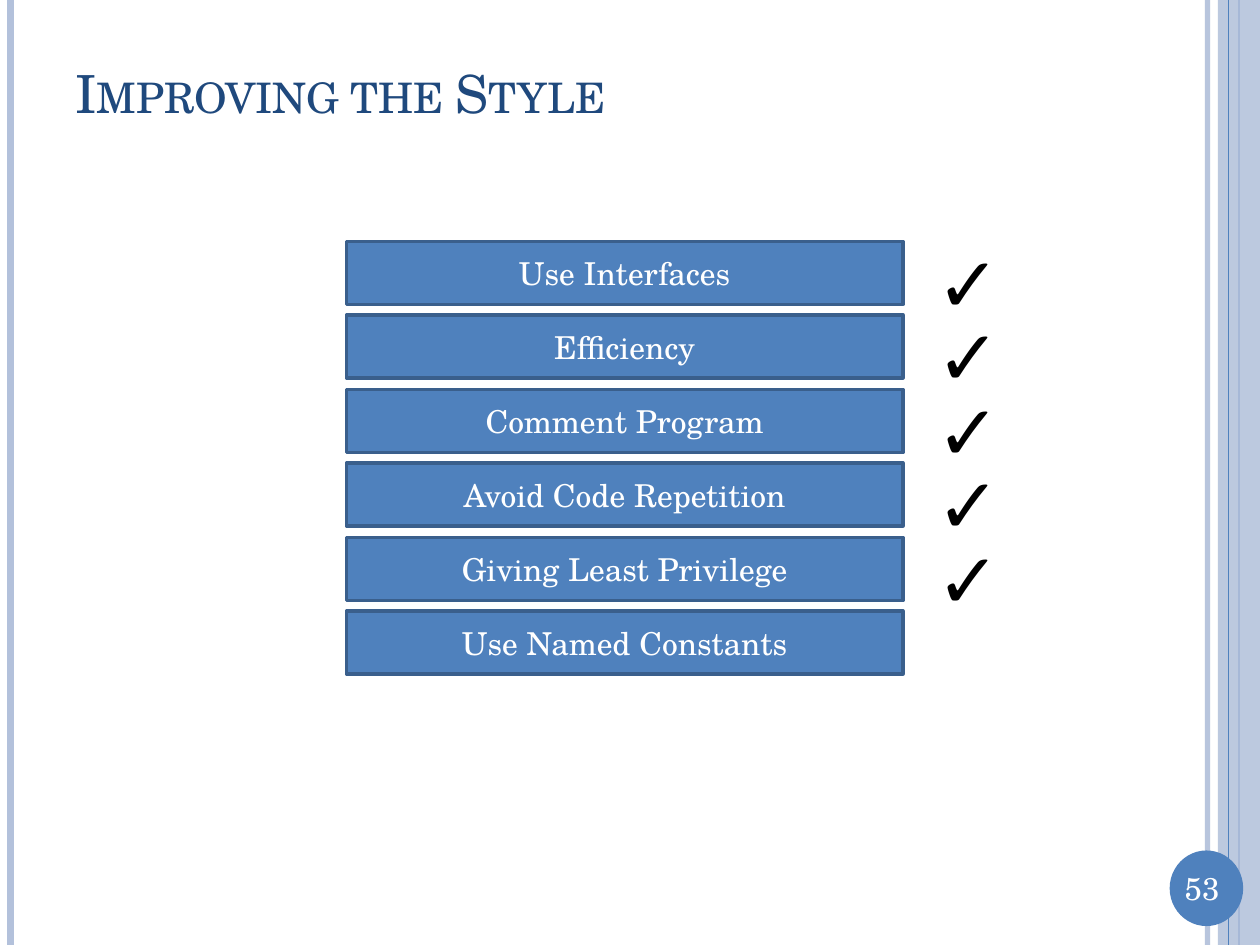
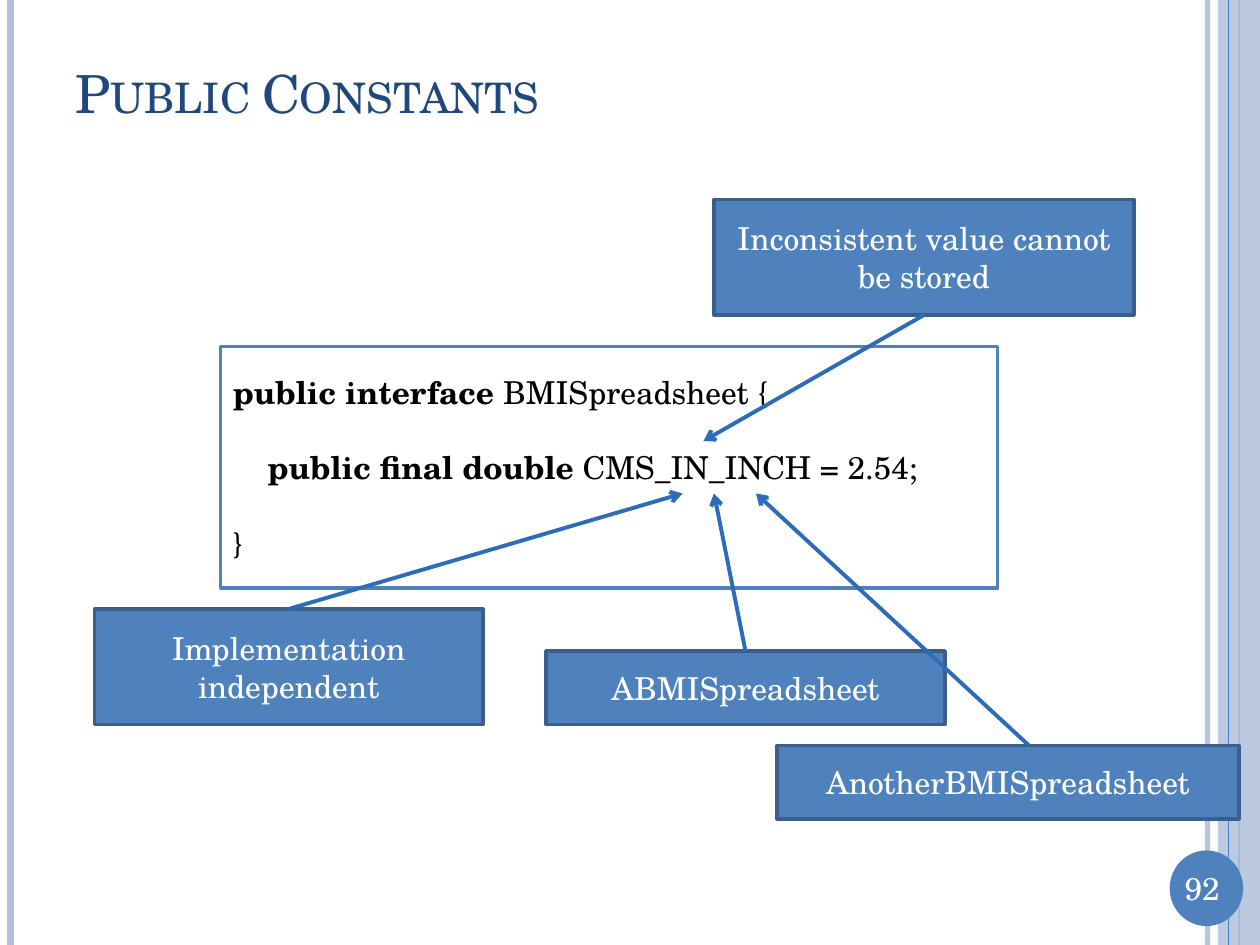
from pptx import Presentation
from pptx.dml.color import RGBColor
from pptx.enum.shapes import MSO_CONNECTOR, MSO_SHAPE
from pptx.enum.text import MSO_ANCHOR, PP_ALIGN
from pptx.oxml.ns import qn
from pptx.oxml.xmlchemy import OxmlElement
from pptx.util import Pt

PX = 7620  # EMU per px, 120 px to the inch
W, H = 1200, 900
COLORS = {
    "navy": "1F497D", "blue": "4F81BD", "edge": "3A5F8C", "arrow": "2C6CB9",
    "band": "B3C1DB", "white": "FFFFFF", "black": "000000",
}
RGB = {name: RGBColor.from_string(value) for name, value in COLORS.items()}
FONT = {"name": "TeX Gyre Schola", "size": Pt(18)}
LABEL = {"fill": "blue", "line": "edge"}


def add_box(sl, at, text="", kind=MSO_SHAPE.RECTANGLE, fill=None, line=None,
            color="white", align=PP_ALIGN.CENTER, anchor=MSO_ANCHOR.MIDDLE, **font):
    """Add a preset shape, or a text box when kind is None."""
    at = [v * PX for v in at]
    if kind is None:
        sp = sl.shapes.add_textbox(*at)
    else:
        sp = sl.shapes.add_shape(kind, *at)
        sp.shadow.inherit = False
        sp.fill.solid()
        sp.fill.fore_color.rgb = RGB[fill]
        if line:
            sp.line.color.rgb = RGB[line]
            sp.line.width = Pt(2)
        else:
            sp.line.fill.background()
    tf = sp.text_frame
    tf.word_wrap = True
    tf.vertical_anchor = anchor
    if text:
        p = tf.paragraphs[0]
        p.alignment = align
        r = p.add_run()
        r.text = text
        r.font.color.rgb = RGB[color]
        for key, value in {**FONT, **font}.items():
            setattr(r.font, key, value)
    return sp


def add_line(sl, start, end, color, width):
    cx = sl.shapes.add_connector(
        MSO_CONNECTOR.STRAIGHT, *[v * PX for v in (*start, *end)])
    cx.line.color.rgb = RGB[color]
    cx.line.width = Pt(width)
    cx._element.spPr.append(OxmlElement("a:effectLst"))
    return cx


prs = Presentation()
prs.slide_width, prs.slide_height = W * PX, H * PX

# Shared side bands, page number and title
slides = []
for title, number in [("Improving the Style", "53"), ("Public Constants", "92")]:
    sl = prs.slides.add_slide(prs.slide_layouts[6])
    slides.append(sl)
    rules = [add_line(sl, (x, 0), (x, H), color, width) for x, color, width in
             [(1150, "band", 3), (10, "band", 4.5), (1180, "blue", 1.5)]]
    band = add_box(sl, (1160, 0, 40, H), fill="band")
    add_line(sl, (1170, 0), (1170, H), "blue", 0.75)
    for sp, opacity in [(rules[0], 93), (band, 87)]:
        alpha = OxmlElement("a:alpha")
        alpha.set("val", str(opacity * 1000))
        next(sp._element.spPr.iter(qn("a:srgbClr"))).append(alpha)
    add_box(sl, (1114, 810, 70, 72), kind=MSO_SHAPE.OVAL, fill="blue")
    add_box(sl, (1110, 822, 70, 48), number, kind=None, anchor=MSO_ANCHOR.TOP)
    sp = add_box(sl, (60, 36, 1040, 104), title, kind=None, color="navy",
                 align=PP_ALIGN.LEFT, size=Pt(30))
    sp.text_frame.paragraphs[0].runs[0]._r.get_or_add_rPr().set("cap", "small")

style_slide, constants_slide = slides

# Checklist of style rules
style_rules = [
    ("Use Interfaces", True),
    ("Efficiency", True),
    ("Comment Program", True),
    ("Avoid Code Repetition", True),
    ("Giving Least Privilege", True),
    ("Use Named Constants", False),
]
for i, (rule, done) in enumerate(style_rules):
    top = 230 + round(i * 70.4)
    add_box(style_slide, (330, top, 530, 60), rule, **LABEL)
    if done:
        add_box(style_slide, (880, top - 12, 60, 101), "✓", kind=None, color="black",
                align=PP_ALIGN.LEFT, anchor=MSO_ANCHOR.TOP, size=Pt(44))

# Code listing: indent in px, then runs of (text, bold)
code = [
    (0, [("public interface ", True), ("BMISpreadsheet {", False)]),
    (33, [("public final double", True), (" CMS_IN_INCH = 2.54;", False)]),
    (0, [("}", False)]),
]
tf = add_box(constants_slide, (210, 330, 740, 230), fill="white", line="blue").text_frame
for i, (indent, runs) in enumerate(code):
    p = tf.add_paragraph() if i else tf.paragraphs[0]
    p.alignment = PP_ALIGN.LEFT
    p.space_before = Pt(21.4 if i else 0)
    p._p.get_or_add_pPr().set("marL", str(indent * PX))
    for text, bold in runs:
        r = p.add_run()
        r.text = text
        r.font.color.rgb = RGB["black"]
        for key, value in {**FONT, "bold": bold}.items():
            setattr(r.font, key, value)

# Callouts: text, box, arrow start, arrow end, joined side
callouts = [
    ("Inconsistent value cannot be stored", (680, 190, 400, 110), (880, 300), (670, 420), 2),
    ("Implementation independent", (90, 580, 370, 110), (275, 580), (650, 470), 0),
    ("ABMISpreadsheet", (520, 620, 380, 70), (710, 620), (680, 470), 0),
    ("AnotherBMISpreadsheet", (740, 710, 440, 70), (980, 710), (720, 470), None),
]
for text, at, start, end, side in callouts:
    sp = add_box(constants_slide, at, text, **LABEL)
    cx = add_line(constants_slide, start, end, "arrow", 2.25)
    if side is not None:
        cx.begin_connect(sp, side)
    tail = OxmlElement("a:tailEnd")
    tail.set("type", "arrow")
    cx.line._get_or_add_ln().append(tail)

prs.save("out.pptx")
